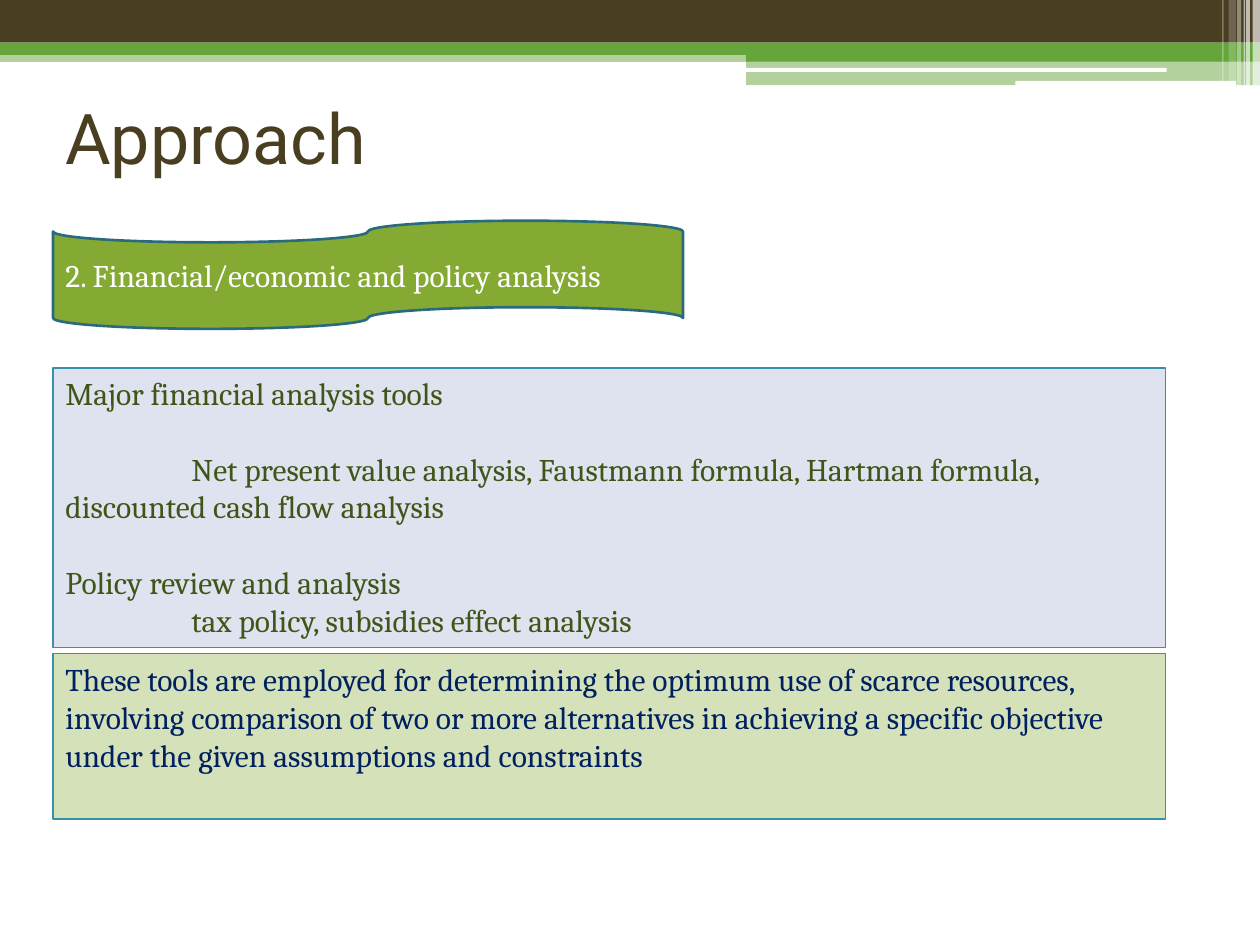
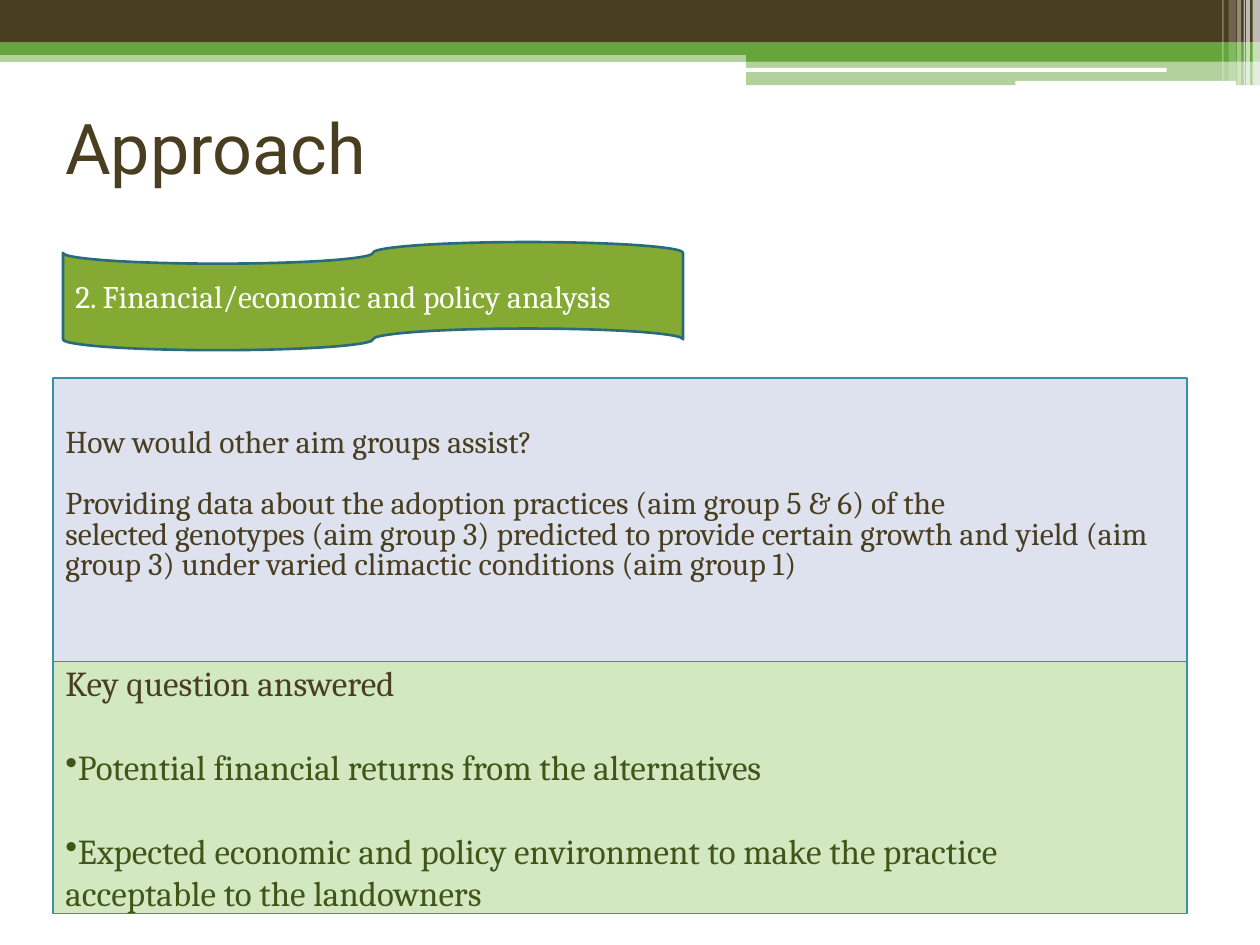
import lxml.etree
import pptx
import pptx.dml.color
import pptx.enum.shapes
import pptx.enum.text
import pptx.oxml.ns
import pptx.util

Cm = pptx.util.Cm
Pt = pptx.util.Pt
SHAPE = pptx.enum.shapes.MSO_SHAPE
ANCHOR = pptx.enum.text.MSO_ANCHOR
qn = pptx.oxml.ns.qn

COLOURS = {
    "brown": "4A3E21", "green": "66A53B", "white": "FFFFFF",
    "olive": "84AA33", "moss": "425519", "navy": "002060",
    "lavender": "B0BAD7", "mint": "BADDA2",
    "teal": "3891A7", "dark teal": "296B7C",
}

# left, top, width, height in cm, then colour and opacity in percent
BANDS = [
    (0, 1.02, 25.4, 0.23, "green", 50),
    (0, 0, 25.4, 0.86, "brown", 100),
    (0, 0.86, 25.4, 0.25, "green", 100),
    (15.04, 0.99, 10.36, 0.25, "green", 100),
    (15.04, 1.22, 10.36, 0.5, "green", 50),
]
SLITS = [
    (15.01, 1.37, 8.51, 0.08, "white", 100),
    (20.47, 1.63, 4.45, 0.1, "white", 100),
]
# left, width, height in cm, then opacity in percent
STRIPES = [
    (25.25, 0.15, 1.73, 65), (25.12, 0.08, 1.73, 65), (25.07, 0.03, 1.73, 60),
    (24.94, 0.08, 1.73, 40), (24.77, 0.15, 1.63, 20), (24.64, 0.03, 1.63, 30),
]

MARGIN = 1.07
TAB = 2.54
LINE_18 = Pt(21.5)
LINE_20 = Pt(24)
LINE_TIGHT = Pt(17.4)


class SlideBuilder:
    """Holds the deck's style and the page being filled."""

    def __init__(self):
        self.deck = pptx.Presentation()
        self.deck.slide_width = Cm(25.4)
        self.deck.slide_height = Cm(19.05)
        self.page = None

    def colour(self, name):
        return pptx.dml.color.RGBColor.from_string(COLOURS[name])

    def new_page(self, title_area):
        self.page = self.deck.slides.add_slide(self.deck.slide_layouts[6])
        for *area, colour, opacity in BANDS:
            self.shape(SHAPE.RECTANGLE, area, colour, opacity)
        for *area, colour, opacity in SLITS:
            self.shape(SHAPE.ROUNDED_RECTANGLE, area, colour, opacity)
        for left, width, height, opacity in STRIPES:
            self.shape(SHAPE.RECTANGLE, (left, 0, width, height), "white", opacity)
        title = self.page.shapes.add_textbox(*map(Cm, title_area))
        self.fill_text(title, [("Approach", {})], "brown", {"name": "Roboto", "size": Pt(40)},
                       {"vertical_anchor": ANCHOR.MIDDLE})

    def shape(self, kind, area, fill, opacity=100, line=None, line_width=0.75):
        shape = self.page.shapes.add_shape(kind, *map(Cm, area))
        shape.shadow.inherit = False
        shape.fill.solid()
        shape.fill.fore_color.rgb = self.colour(fill)
        if opacity < 100:
            tint = shape.element.spPr.find(".//" + qn("a:srgbClr"))
            lxml.etree.SubElement(tint, qn("a:alpha")).set("val", str(opacity * 1000))
        if line:
            shape.line.color.rgb = self.colour(line)
            shape.line.width = Pt(line_width)
        else:
            shape.line.fill.background()
        return shape

    def fill_text(self, box, lines, colour, font, frame_format):
        """Fill a box from (text, format) pairs; a format may name a colour, indent or bullet."""
        frame = box.text_frame
        frame.word_wrap = True
        for name, value in frame_format.items():
            setattr(frame, name, value)
        for number, (text, line_format) in enumerate(lines):
            para = frame.paragraphs[0] if number == 0 else frame.add_paragraph()
            extras = dict(line_format)
            text_colour = extras.pop("colour", colour)
            indent = extras.pop("indent", 0)
            bullet = extras.pop("bullet", None)
            para.alignment = pptx.enum.text.PP_ALIGN.LEFT
            for name, value in extras.items():
                setattr(para, name, value)
            settings = para._p.get_or_add_pPr()
            settings.set("marL", "0")
            settings.set("indent", str(Cm(indent)))
            if bullet:
                lxml.etree.SubElement(settings, qn("a:buChar")).set("char", bullet)
            span = para.add_run()
            span.text = text
            span.font.color.rgb = self.colour(text_colour)
            for name, value in font.items():
                setattr(span.font, name, value)

    def banner(self, area, text):
        box = self.shape(SHAPE.FLOWCHART_PUNCHED_TAPE, area, "olive",
                         line="dark teal", line_width=1.5)
        self.fill_text(box, [(text, {})], "white", {"name": "Cambria", "size": Pt(18)},
                       {"vertical_anchor": ANCHOR.MIDDLE})

    def panel(self, area, fill, opacity, lines, colour, size=18, **frame_format):
        box = self.shape(SHAPE.RECTANGLE, area, fill, opacity, "teal")
        self.fill_text(box, lines, colour, {"name": "Cambria", "size": Pt(size)},
                       {"vertical_anchor": ANCHOR.TOP, **frame_format})


def main():
    builder = SlideBuilder()
    heading = "2. Financial/economic and policy analysis"

    builder.new_page((MARGIN, 1.7, 23.06, 2.11))
    builder.banner((MARGIN, 4.45, 12.7, 2.18), heading)
    builder.panel((MARGIN, 13.18, 22.43, 3.33), "olive", 34, [
        ("These tools are employed for determining the optimum use of scarce resources, "
         "involving comparison of two or more alternatives in achieving a specific objective "
         "under the given assumptions and constraints", {}),
    ], "navy")
    builder.panel((MARGIN, 7.42, 22.43, 5.64), "lavender", 40, [
        ("Major financial analysis tools", {}),
        ("Net present value analysis, Faustmann formula, Hartman formula, "
         "discounted cash flow analysis", {"indent": TAB, "space_before": LINE_18}),
        ("Policy review and analysis", {"space_before": LINE_18}),
        ("tax policy, subsidies effect analysis", {"indent": TAB}),
    ], "moss")

    builder.new_page((MARGIN, 1.47, 22.86, 2.97))
    builder.banner((1.27, 4.88, 12.5, 2.18), heading)
    answer = {"bullet": "•", "colour": "moss", "space_before": LINE_20}
    builder.panel((MARGIN, 13.34, 22.86, 5.08), "mint", 66, [
        ("Key question answered", {}),
        ("Potential financial returns from the alternatives", answer),
        ("Expected economic and policy environment to make the practice", answer),
        ("acceptable to the landowners", {"colour": "moss"}),
    ], "brown", 20, vertical_anchor=ANCHOR.MIDDLE)
    tight = {"line_spacing": 0.8}
    builder.panel((MARGIN, 7.62, 22.86, 5.72), "lavender", 42, [
        ("How would other aim groups assist?", tight),
        ("Providing data about the adoption practices (aim group 5 & 6) of the",
         {**tight, "space_before": LINE_TIGHT}),
        ("selected genotypes (aim group 3) predicted to provide certain growth and yield "
         "(aim group 3) under varied climactic conditions (aim group 1)", tight),
    ], "brown", 18.1, margin_top=Cm(1.04))

    builder.deck.save("out.pptx")


if __name__ == "__main__":
    main()
